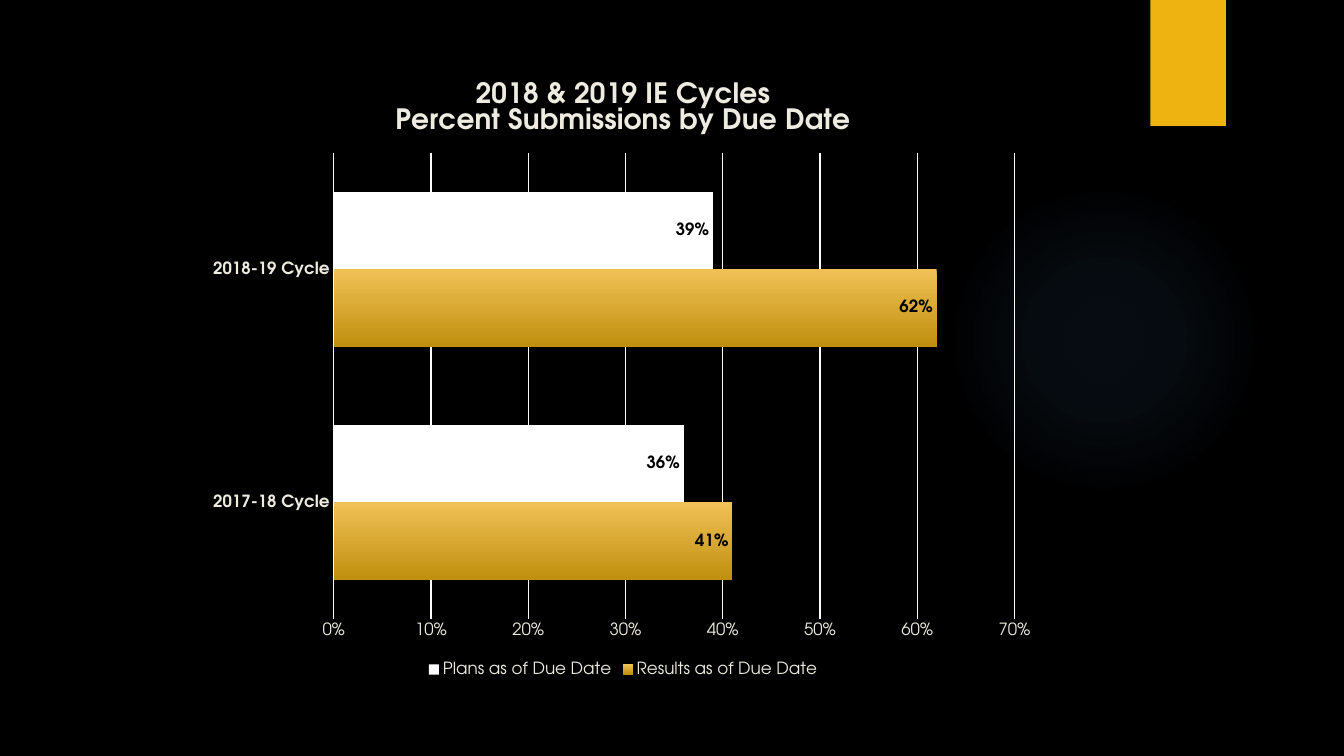
from lxml import etree
from pptx import Presentation
from pptx.chart.data import CategoryChartData
from pptx.dml.color import RGBColor
from pptx.enum.chart import XL_CHART_TYPE, XL_LABEL_POSITION, XL_LEGEND_POSITION, XL_TICK_MARK
from pptx.enum.shapes import MSO_SHAPE
from pptx.oxml import parse_xml
from pptx.oxml.ns import nsdecls, qn
from pptx.util import Inches, Pt

FACE = "TeX Gyre Adventor"
CREAM, GRID, GOLD = "EEECE1", "FCFCFA", "EEB211"


def rgb(code):
    return RGBColor.from_string(code)


def style(font, size, color, bold=False):
    font.name, font.size, font.bold = FACE, Pt(size), bold
    font.color.rgb = rgb(color)


prs = Presentation()
prs.slide_width, prs.slide_height = Inches(13.33), Inches(7.5)
slide = prs.slides.add_slide(prs.slide_layouts[6])
slide.background.fill.solid()
slide.background.fill.fore_color.rgb = rgb("000000")

# Soft glow and gold tab
glow = slide.shapes.add_shape(
    MSO_SHAPE.OVAL, Inches(9.41), Inches(1.83), Inches(3.08), Inches(3.08))
glow.shadow.inherit = False
glow.line.fill.background()
glow.fill.gradient()
fade = glow.element.spPr.find(qn("a:gradFill"))
for part in list(fade):
    fade.remove(part)
stops = etree.SubElement(fade, qn("a:gsLst"))
for pos, alpha in ((0, 7), (36, 6), (69, 0)):
    stops.append(parse_xml(
        f'<a:gs {nsdecls("a")} pos="{pos * 1000}"><a:srgbClr val="66B0FF">'
        f'<a:alpha val="{alpha * 1000}"/></a:srgbClr></a:gs>'))
fade.append(parse_xml(
    f'<a:path {nsdecls("a")} path="circle">'
    '<a:fillToRect l="50000" t="50000" r="50000" b="50000"/></a:path>'))

tab = slide.shapes.add_shape(
    MSO_SHAPE.RECTANGLE, Inches(11.41), 0, Inches(0.75), Inches(1.25))
tab.shadow.inherit = False
tab.line.fill.background()
tab.fill.solid()
tab.fill.fore_color.rgb = rgb(GOLD)

# Bar chart
data = CategoryChartData(number_format="0%")
data.categories = ["2017-18 Cycle", "2018-19 Cycle"]
data.add_series("Results as of Due Date", (0.41, 0.62))
data.add_series("Plans as of Due Date", (0.36, 0.39))
chart = slide.shapes.add_chart(
    XL_CHART_TYPE.BAR_CLUSTERED, Inches(1.96), Inches(0.59),
    Inches(8.44), Inches(6.17), data).chart
style(chart.font, 10, "FFFFFF")

chart.has_title = True
title = chart.chart_title.text_frame
title.text = "2018 & 2019 IE Cycles\nPercent Submissions by Due Date"
for para in title.paragraphs:
    style(para.font, 20, CREAM, True)
    for run in para.runs:
        style(run.font, 20, CREAM, True)
chart.chart_title.include_in_layout = False

chart.has_legend = True
chart.legend.position = XL_LEGEND_POSITION.BOTTOM
chart.legend.include_in_layout = False
style(chart.legend.font, 12, CREAM)

cat, val = chart.category_axis, chart.value_axis
for axis in (cat, val):
    axis.major_tick_mark = axis.minor_tick_mark = XL_TICK_MARK.NONE
    style(axis.tick_labels.font, 12, CREAM, axis is cat)
val.minimum_scale, val.maximum_scale, val.major_unit = 0, 0.7, 0.1
val.tick_labels.number_format = "0%"
val.tick_labels.number_format_is_linked = False
val.format.line.fill.background()
val.has_major_gridlines = True
for line in (cat.format.line, val.major_gridlines.format.line):
    line.color.rgb = rgb(GRID)
    line.width = Pt(0.75)

plot = chart.plots[0]
plot.gap_width, plot.overlap = 100, 0
plot.vary_by_categories = False
for series in plot.series:
    labels = series.data_labels
    labels.show_value = True
    labels.position = XL_LABEL_POSITION.INSIDE_END
    labels.number_format, labels.number_format_is_linked = "0%", False
    style(labels.font, 12, "000000", True)
results, plans = plot.series
results.format.fill.gradient()
results.format.fill.gradient_angle = 270
for stop, color in zip(results.format.fill.gradient_stops, ("F1C156", "BF8F0E")):
    stop.color.rgb = rgb(color)
plans.format.fill.solid()
plans.format.fill.fore_color.rgb = rgb("FFFFFF")

# Fixed inner plot area, as shares of the chart frame
area = chart.element.find(".//" + qn("c:plotArea"))
for old in area.findall(qn("c:layout")):
    area.remove(old)
shares = "".join(f'<c:{key} val="{share}"/>' for key, share in
                 (("x", 0.16), ("y", 0.15), ("w", 0.8), ("h", 0.75)))
area.insert(0, parse_xml(
    f'<c:layout {nsdecls("c")}><c:manualLayout><c:layoutTarget val="inner"/>'
    f'<c:xMode val="edge"/><c:yMode val="edge"/>{shares}</c:manualLayout></c:layout>'))

prs.save("out.pptx")
